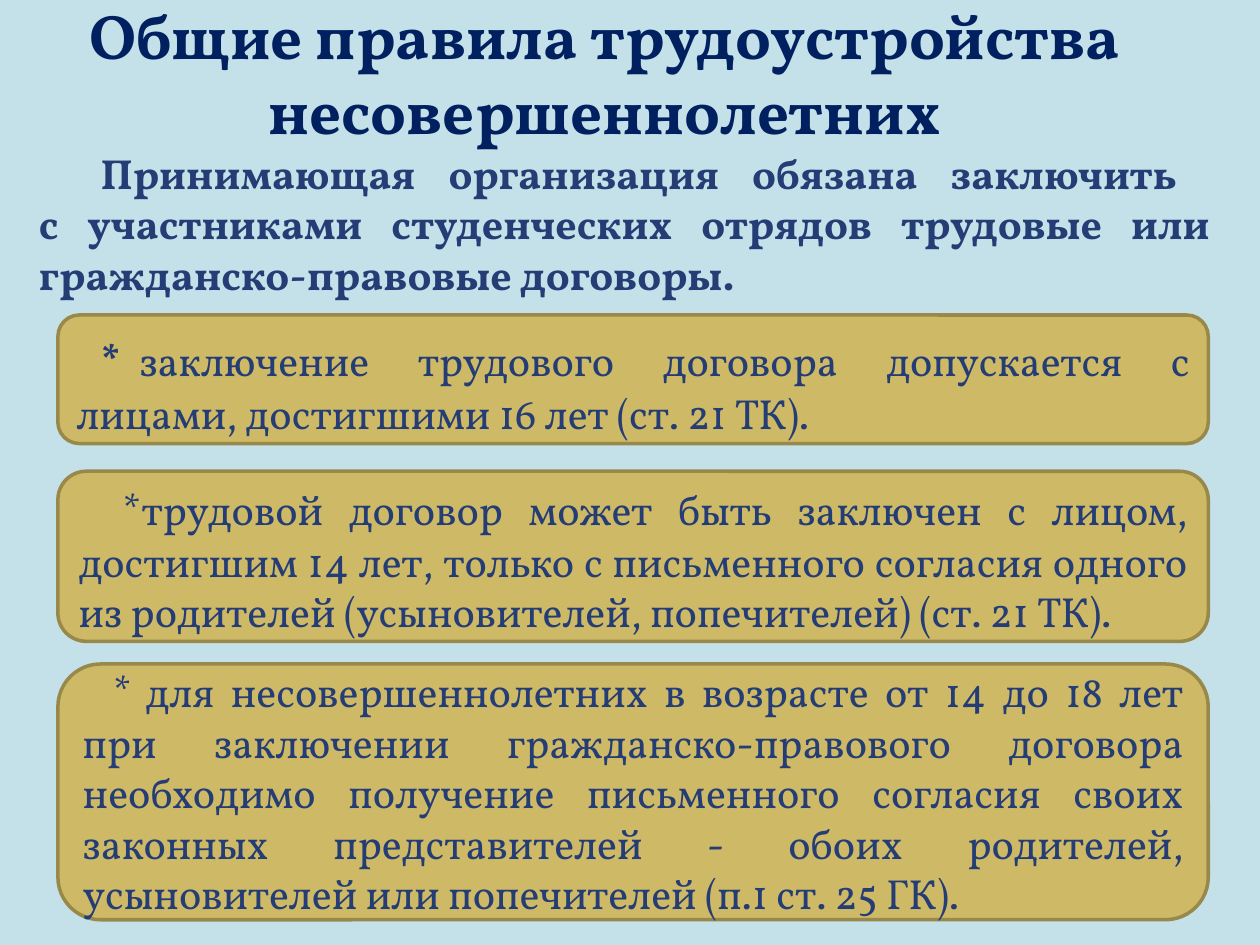
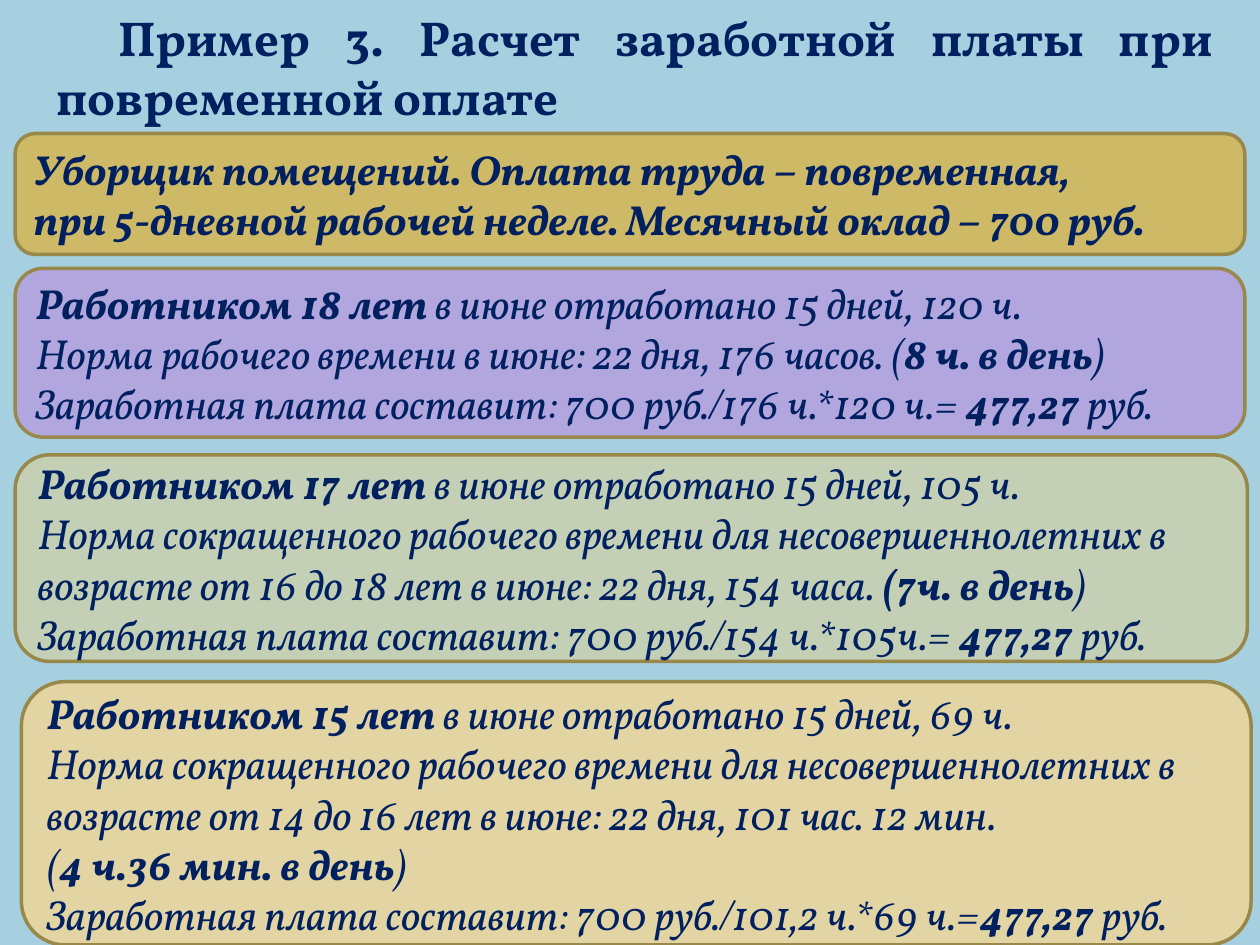
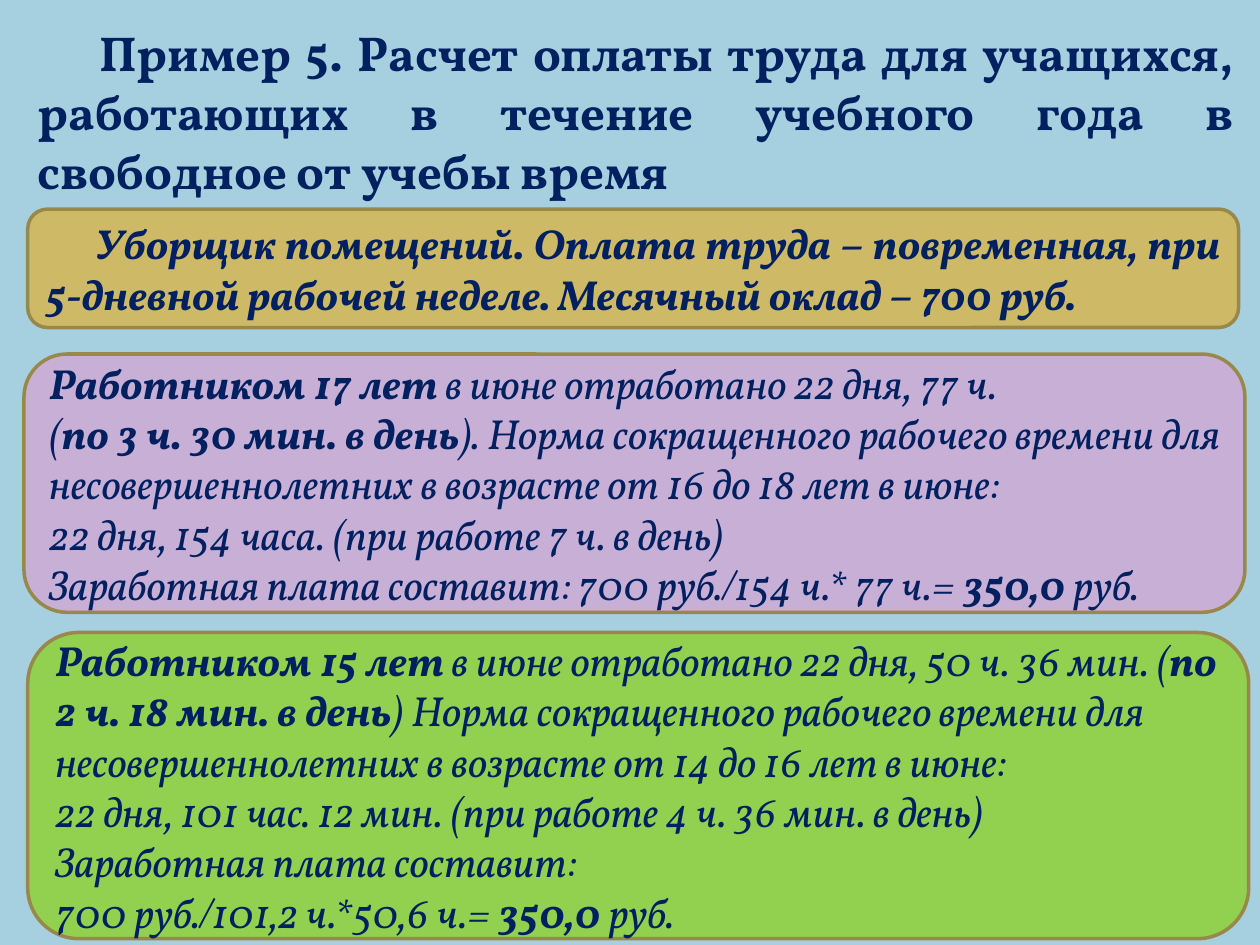
import pptx
import pptx.dml.color
import pptx.enum.shapes
import pptx.enum.text
import pptx.oxml
import pptx.oxml.ns
import pptx.util
from dataclasses import dataclass

ALIGN = pptx.enum.text.PP_ALIGN
ANCHOR = pptx.enum.text.MSO_ANCHOR


@dataclass(frozen=True)
class Theme:
    font: str = "Vollkorn"
    navy: str = "002060"
    slate: str = "253D75"
    gold: str = "CEB966"
    outline: str = "98894B"
    violet: str = "B2A6DF"
    sage: str = "C4D0B5"
    sand: str = "E2D5A3"
    lilac: str = "C8AFD6"
    green: str = "92D050"
    pale: str = "C4E0E9"
    sky: str = "A6D0DF"
    headline: int = 36
    title: int = 28
    body: int = 24
    outline_width: int = 2


THEME = Theme()
COLUMNS, ROWS = 100, 75
TITLE_INDENT = 0.49

HEADLINE = {"size": THEME.headline, "align": ALIGN.CENTER}
TITLE = {"size": THEME.title, "align": ALIGN.JUSTIFY, "indent": TITLE_INDENT}
LEAD = {"color": THEME.slate, "align": ALIGN.JUSTIFY, "indent": TITLE_INDENT}
RULE = {"color": THEME.slate, "align": ALIGN.JUSTIFY}
EXAMPLE = {"italic": True}
JUSTIFIED_EXAMPLE = {"italic": True, "align": ALIGN.JUSTIFY}

# Text between bars is bold; frames are left, top, width, height in grid units.
SLIDES = [
    {
        "background": THEME.pale,
        "texts": [
            ((0, -0.8, 97, 13.1), HEADLINE,
             ["|Общие правила трудоустройства \nнесовершеннолетних |"]),
            ((2.1, 11.2, 94.9, 13.5), LEAD,
             ["|Принимающая организация обязана заключить \nс участниками студенческих отрядов "
              "трудовые или гражданско-правовые договоры.|"]),
        ],
        "cards": [
            ((4.6, 25, 91.3, 10.2), THEME.gold,
             {**RULE, "indent": 0.19, "tab": 0.43, "tab_size": 32},
             ["|*\t|заключение трудового договора допускается с лицами, достигшими 16 лет (ст. 21 ТК)."]),
            ((4.6, 37.4, 91.3, 13.5), THEME.gold,
             {**RULE, "indent": 0.35, "tab": 0.81, "tab_size": 28},
             ["*\tтрудовой договор может быть заключен с лицом, достигшим 14 лет, только с письменного "
              "согласия одного из родителей (усыновителей, попечителей) (ст. 21 ТК)."]),
            ((4.6, 52.7, 91.3, 20.3), THEME.gold,
             {**RULE, "indent": 0.24, "tab": 0.62},
             ["*\tдля несовершеннолетних в возрасте от 14 до 18 лет при заключении гражданско-правового "
              "договора необходимо получение письменного согласия своих законных представителей - "
              "обоих родителей, усыновителей или попечителей (п.1 ст. 25 ГК)."]),
        ],
    },
    {
        "background": THEME.sky,
        "texts": [
            ((3.5, 0.1, 93.7, 10.4), TITLE,
             ["|Пример 3. Расчет заработной платы при повременной оплате|"]),
        ],
        "cards": [
            ((1.2, 10.6, 97.6, 9.6), THEME.gold, EXAMPLE,
             ["|Уборщик помещений. Оплата труда – повременная,|",
              "|при 5-дневной рабочей неделе. Месячный оклад – 700 руб.|"]),
            ((1.2, 21.3, 97.6, 13.4), THEME.violet, EXAMPLE,
             ["|Работником 18 лет| в июне отработано 15 дней, 120 ч.",
              "Норма рабочего времени в июне: 22 дня, 176 часов. (|8 ч. в день|)",
              "Заработная плата составит: 700 руб./176 ч.*120 ч.= |477,27 |руб."]),
            ((1.2, 36.1, 97.8, 16.4), THEME.sage, EXAMPLE,
             ["|Работником 17 лет| в июне отработано 15 дней, 105 ч.",
              "Норма сокращенного рабочего времени для несовершеннолетних в возрасте от 16 до 18 лет "
              "в июне: 22 дня, 154 часа. |(7ч. в день|)",
              "Заработная плата составит: 700 руб./154 ч.*105ч.= |477,27 |руб."]),
            ((1.7, 54.1, 97.6, 20.9), THEME.sand, EXAMPLE,
             ["|Работником 15 лет| в июне отработано 15 дней, 69 ч.",
              "Норма сокращенного рабочего времени для несовершеннолетних в возрасте от 14 до 16 лет "
              "в июне: 22 дня, 101 час. 12 мин.",
              "(|4 ч.36 мин. в день|)",
              "Заработная плата составит: 700 руб./101,2 ч.*69 ч.=|477,27 |руб."]),
        ],
    },
    {
        "background": THEME.sky,
        "texts": [
            ((2, 1.3, 96.9, 15.1), TITLE,
             ["|Пример 5. Расчет оплаты труда для учащихся, работающих в течение учебного года "
              "в свободное от учебы время|"]),
        ],
        "cards": [
            ((2.2, 16.6, 96.1, 9.4), THEME.gold, {**JUSTIFIED_EXAMPLE, "indent": 0.39},
             ["|Уборщик помещений. Оплата труда – повременная, при 5-дневной рабочей неделе. "
              "Месячный оклад – 700 руб.|"]),
            ((1.9, 28.1, 96.9, 20.5), THEME.lilac, JUSTIFIED_EXAMPLE,
             ["|Работником 17 лет| в июне отработано 22 дня, 77 ч.",
              "(|по 3 ч. 30 мин. в день|). Норма сокращенного рабочего времени для "
              "несовершеннолетних в возрасте от 16 до 18 лет в июне:",
              "22 дня, 154 часа. (при работе 7 ч. в день)",
              "Заработная плата составит: 700 руб./154 ч.* 77 ч.= |350,0 |руб."]),
            ((2.2, 50.2, 96.9, 24.3), THEME.green, EXAMPLE,
             ["|Работником 15 лет| в июне отработано 22 дня, 50 ч. 36 мин. (|по 2 ч. 18 мин. в день|) "
              "Норма сокращенного рабочего времени для несовершеннолетних в возрасте от 14 до 16 лет "
              "в июне:",
              "22 дня, 101 час. 12 мин. (при работе 4 ч. 36 мин. в день)",
              "Заработная плата составит:",
              "700 руб./101,2 ч.*50,6 ч.= |350,0 |руб."]),
        ],
    },
]


def rgb(color):
    return pptx.dml.color.RGBColor.from_string(color)


def place(presentation, frame):
    column = presentation.slide_width / COLUMNS
    row = presentation.slide_height / ROWS
    left, top, width, height = frame
    return round(left * column), round(top * row), round(width * column), round(height * row)


def add_run(paragraph, text, bold, style):
    run = paragraph.add_run()
    run.text = text
    size = style.get("size", THEME.body)
    run.font.size = pptx.util.Pt(style.get("tab_size", size) if text == "\t" else size)
    run.font.name = THEME.font
    run.font.bold = bold
    run.font.italic = style.get("italic", False)
    run.font.color.rgb = rgb(style.get("color", THEME.navy))


def format_paragraph(paragraph, style):
    paragraph.alignment = style.get("align", ALIGN.LEFT)
    properties = paragraph._p.get_or_add_pPr()
    properties.set("marL", "0")
    properties.set("indent", str(pptx.util.Inches(style.get("indent", 0))))
    if "tab" in style:
        position = pptx.util.Inches(style["tab"])
        properties.append(pptx.oxml.parse_xml(
            f'<a:tabLst {pptx.oxml.ns.nsdecls("a")}><a:tab pos="{position}" algn="l"/></a:tabLst>'))


def write(shape, paragraphs, style, anchor):
    frame = shape.text_frame
    frame.word_wrap = True
    frame.vertical_anchor = anchor
    for number, text in enumerate(paragraphs):
        paragraph = frame.add_paragraph() if number else frame.paragraphs[0]
        format_paragraph(paragraph, style)
        for index, part in enumerate(text.split("|")):
            for line_number, line in enumerate(part.split("\n")):
                if line_number:
                    paragraph.add_line_break()
                for piece in line.partition("\t"):
                    if piece:
                        add_run(paragraph, piece, index % 2 == 1, style)


def add_card(presentation, slide, frame, color):
    card = slide.shapes.add_shape(
        pptx.enum.shapes.MSO_SHAPE.ROUNDED_RECTANGLE, *place(presentation, frame))
    card.shadow.inherit = False
    card.fill.solid()
    card.fill.fore_color.rgb = rgb(color)
    card.line.color.rgb = rgb(THEME.outline)
    card.line.width = pptx.util.Pt(THEME.outline_width)
    return card


def build_slide(presentation, content):
    slide = presentation.slides.add_slide(presentation.slide_layouts[6])
    slide.background.fill.solid()
    slide.background.fill.fore_color.rgb = rgb(content["background"])
    for frame, style, paragraphs in content["texts"]:
        box = slide.shapes.add_textbox(*place(presentation, frame))
        write(box, paragraphs, style, ANCHOR.TOP)
    for frame, color, style, paragraphs in content["cards"]:
        card = add_card(presentation, slide, frame, color)
        write(card, paragraphs, style, ANCHOR.MIDDLE)


def main():
    presentation = pptx.Presentation()
    presentation.slide_width = pptx.util.Inches(10)
    presentation.slide_height = pptx.util.Inches(7.5)
    for content in SLIDES:
        build_slide(presentation, content)
    presentation.save("out.pptx")


if __name__ == "__main__":
    main()
